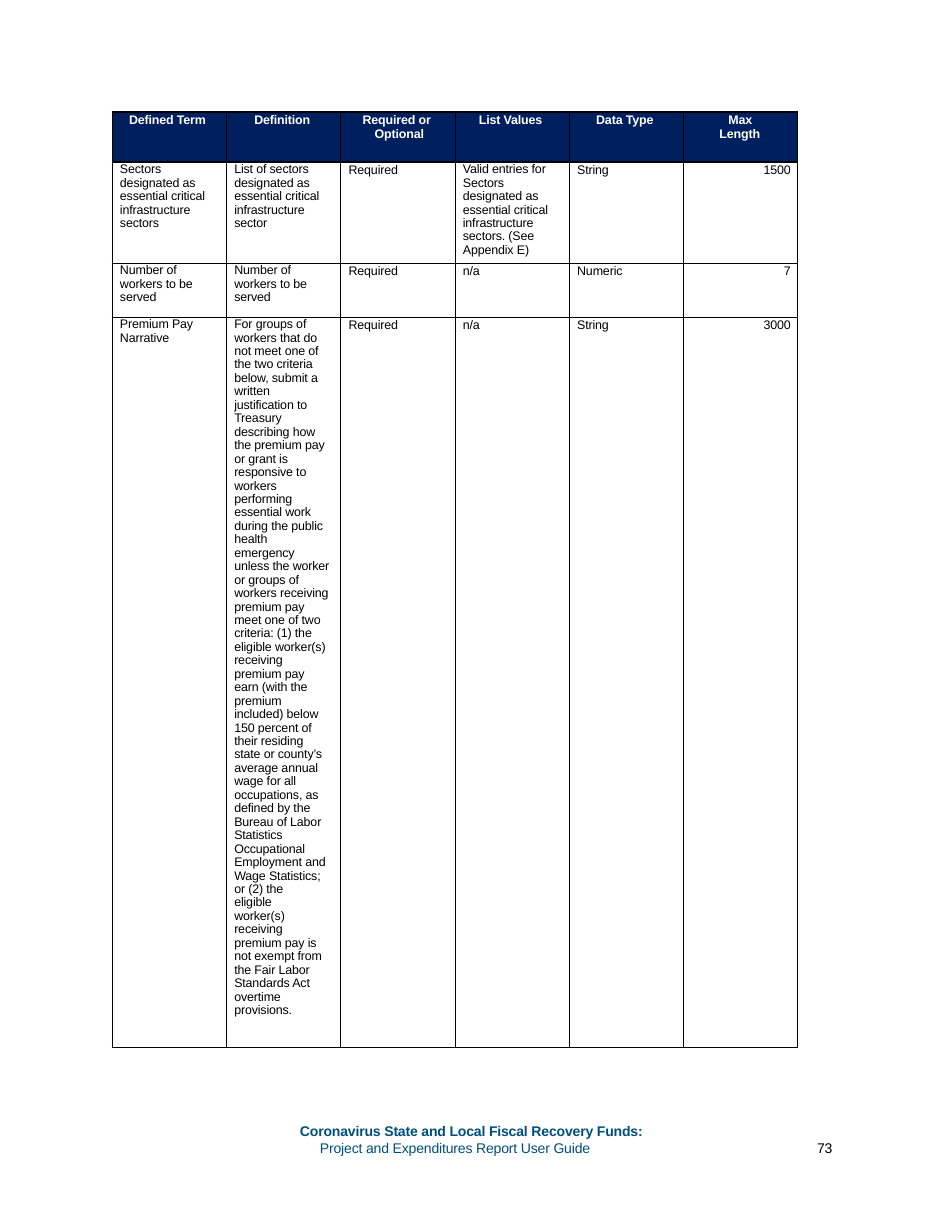
from dataclasses import dataclass

from lxml import etree
from pptx import Presentation
from pptx.dml.color import RGBColor
from pptx.enum.text import PP_ALIGN
from pptx.oxml.ns import qn
from pptx.util import Pt

LEFT, RIGHT = PP_ALIGN.LEFT, PP_ALIGN.RIGHT
EMU_PER_INCH, PX_PER_INCH = 914400, 112
BLANK_LAYOUT = 6


@dataclass(frozen=True)
class Theme:
    font: str = "Arial"
    table_size: float = 8
    footer_size: float = 9
    navy: str = "001F5F"
    blue: str = "004E7C"
    white: str = "FFFFFF"
    black: str = "000000"
    thin: float = 0.5
    thick: float = 1
    tracking: int = -10


THEME = Theme()

# Heading, left margin and first-line indent in px
HEADERS = [
    ("Defined Term", 17, 0),
    ("Definition", 28, 0),
    ("Required or\nOptional", 34, -12),
    ("List Values", 24, 0),
    ("Data Type", 27, 0),
    ("Max\nLength", 36, 9),
]

NARRATIVE = [
    "For groups of\nworkers that do\nnot meet one of\nthe two criteria\nbelow, submit a\n"
    "written\njustification to\nTreasury\ndescribing how\nthe premium pay\nor grant is\n"
    "responsive to\nworkers\nperforming\nessential work\nduring the public\nhealth\n"
    "emergency\nunless the worker\nor groups of\nworkers receiving\npremium pay\n"
    "meet one of two\ncriteria: (1) the\neligible worker(s)\nreceiving\npremium pay\n"
    "earn (with the\npremium\nincluded) below\n150 percent of\ntheir residing",
    "state or county’s",
    "average annual\nwage for all\noccupations, as\ndefined by the\nBureau of Labor\n"
    "Statistics\nOccupational\nEmployment and\nWage Statistics;\nor (2) the\neligible\n"
    "worker(s)\nreceiving\npremium pay is\nnot exempt from\nthe Fair Labor\n"
    "Standards Act\novertime\nprovisions.",
]

WORKERS = "Number of\nworkers to be\nserved"
SECTORS = "designated as\nessential critical\ninfrastructure\n"
BODY_ROWS = [
    ["Sectors\n" + SECTORS + "sectors", "List of sectors\n" + SECTORS + "sector", "Required",
     "Valid entries for\nSectors\n" + SECTORS + "sectors. (See\nAppendix E)", "String", "1500"],
    [WORKERS, WORKERS, "Required", "n/a", "Numeric", "7"],
    ["Premium Pay\nNarrative", NARRATIVE, "Required", "n/a", "String", "3000"],
]
ROW_HEIGHTS = [50, 101, 54, 730]


def px(length):
    return round(length * EMU_PER_INCH / PX_PER_INCH)


def write_text(paragraph, text, *, size, color, bold=False, align=LEFT,
               margin=0, indent=0, line_spacing=None):
    """Fill a paragraph; each newline in the text becomes a line break."""
    properties = paragraph._p.get_or_add_pPr()
    properties.set("marL", str(px(margin)))
    properties.set("indent", str(px(indent)))
    paragraph.alignment = align
    paragraph.line_spacing = line_spacing
    for number, line in enumerate(text.split("\n")):
        if number:
            paragraph.add_line_break()
        run = paragraph.add_run()
        run.text = line
        run.font.name = THEME.font
        run.font.size = Pt(size)
        run.font.bold = bold
        run.font.color.rgb = RGBColor.from_string(color)
        run._r.get_or_add_rPr().set("spc", str(THEME.tracking))
    for line_break in paragraph._p.findall(qn("a:br")):
        etree.SubElement(line_break, qn("a:rPr")).set("sz", str(int(size * 100)))


def set_borders(cell, left, right, top, bottom):
    properties = cell._tc.get_or_add_tcPr()
    for side, width in zip("LRTB", (left, right, top, bottom)):
        line = etree.SubElement(properties, qn(f"a:ln{side}"), w=str(Pt(width)))
        fill = etree.SubElement(line, qn("a:solidFill"))
        etree.SubElement(fill, qn("a:srgbClr"), val=THEME.black)


def format_cell(cell, borders, fill=None):
    set_borders(cell, *borders)
    if fill:
        cell.fill.solid()
        cell.fill.fore_color.rgb = RGBColor.from_string(fill)
    else:
        cell.fill.background()
    cell.margin_left = cell.margin_bottom = cell.margin_right = 0
    cell.margin_top = px(1)


def fill_header(table):
    for column, (text, margin, indent) in enumerate(HEADERS):
        cell = table.cell(0, column)
        format_cell(cell, (THEME.thin, THEME.thin, THEME.thick, THEME.thick), THEME.navy)
        write_text(cell.text_frame.paragraphs[0], text, size=THEME.table_size,
                   color=THEME.white, bold=True, margin=margin, indent=indent)


def fill_body(table):
    last_column = len(HEADERS) - 1
    for row, values in enumerate(BODY_ROWS, start=1):
        for column, value in enumerate(values):
            cell = table.cell(row, column)
            is_last = column == last_column
            format_cell(cell, (THEME.thin, THEME.thick if is_last else THEME.thin,
                               THEME.thick if row == 1 else THEME.thin, THEME.thin))
            if is_last:
                cell.margin_right = px(7)
            frame = cell.text_frame
            texts = value if isinstance(value, list) else [value]
            for number, text in enumerate(texts):
                paragraph = frame.add_paragraph() if number else frame.paragraphs[0]
                write_text(paragraph, text, size=THEME.table_size, color=THEME.black,
                           align=RIGHT if is_last else LEFT, margin=0 if is_last else 8,
                           line_spacing=0.96 if "\n" in value or len(texts) > 1 else 1.0)


def add_term_table(slide):
    width = px(686)
    frame = slide.shapes.add_table(len(ROW_HEIGHTS), len(HEADERS), px(112), px(112),
                                   width, px(sum(ROW_HEIGHTS)))
    table = frame.table
    table.first_row = table.horz_banding = False
    for column in table.columns:
        column.width = width // len(HEADERS)
    for row, height in zip(table.rows, ROW_HEIGHTS):
        row.height = px(height)
    fill_header(table)
    fill_body(table)


def add_text_box(slide, left, top, width, height):
    frame = slide.shapes.add_textbox(px(left), px(top), px(width), px(height)).text_frame
    frame.word_wrap = True
    frame.margin_left = frame.margin_top = frame.margin_right = frame.margin_bottom = 0
    return frame


def add_footer(slide):
    guide = add_text_box(slide, 299, 1123, 354, 35)
    guide_format = {"size": THEME.footer_size, "color": THEME.blue, "line_spacing": Pt(10.6)}
    write_text(guide.paragraphs[0], "Coronavirus State and Local Fiscal Recovery Funds:",
               bold=True, margin=1, **guide_format)
    write_text(guide.add_paragraph(), "Project and Expenditures Report User Guide",
               margin=21, **guide_format)
    page_number = add_text_box(slide, 813, 1139, 25, 19)
    write_text(page_number.paragraphs[0], "73", size=THEME.footer_size,
               color=THEME.black, margin=4)


def main():
    presentation = Presentation()
    presentation.slide_width, presentation.slide_height = px(952), px(1232)
    slide = presentation.slides.add_slide(presentation.slide_layouts[BLANK_LAYOUT])
    add_term_table(slide)
    add_footer(slide)
    presentation.save("out.pptx")


if __name__ == "__main__":
    main()
